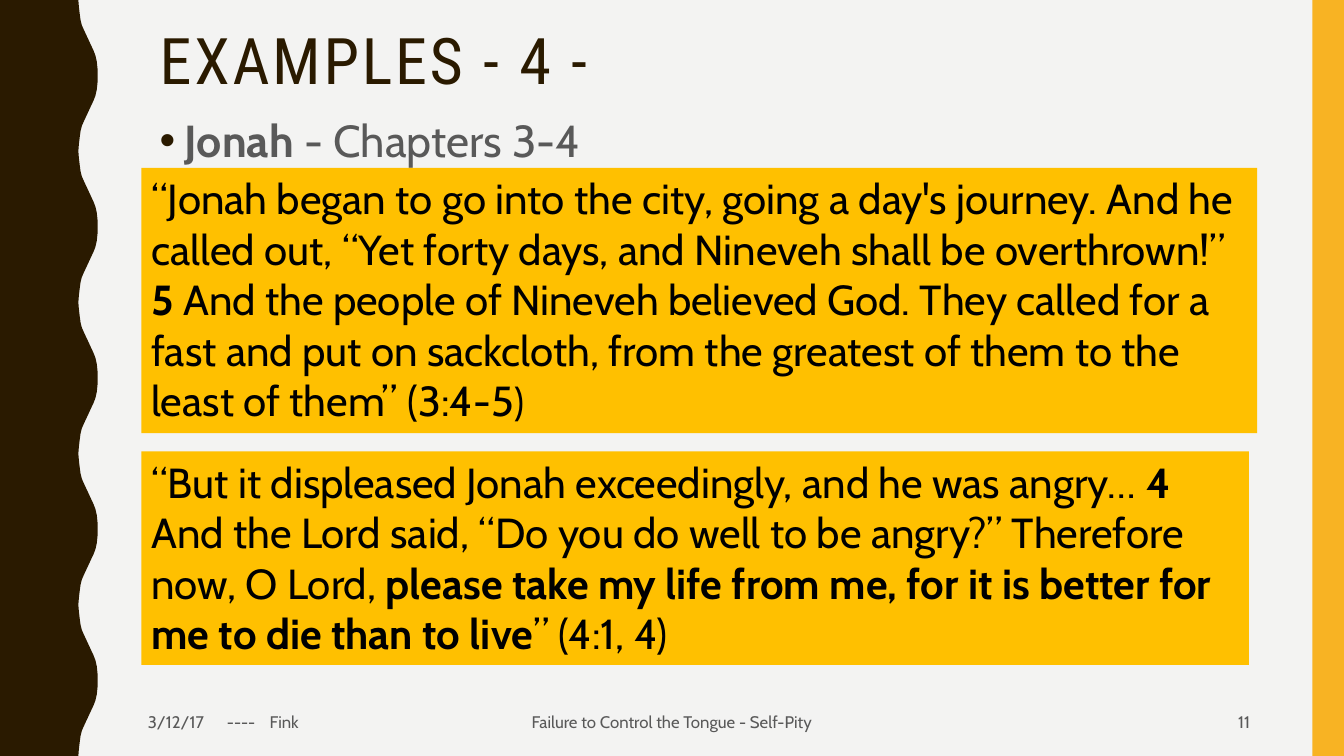
from lxml import etree
from pptx import Presentation
from pptx.dml.color import RGBColor
from pptx.enum.shapes import MSO_SHAPE
from pptx.enum.text import MSO_ANCHOR, MSO_AUTO_SIZE, PP_ALIGN
from pptx.oxml.ns import qn
from pptx.util import Pt

RECTANGLE = MSO_SHAPE.RECTANGLE
TOP, MIDDLE = MSO_ANCHOR.TOP, MSO_ANCHOR.MIDDLE
LEFT, CENTER, RIGHT = PP_ALIGN.LEFT, PP_ALIGN.CENTER, PP_ALIGN.RIGHT
GROW = MSO_AUTO_SIZE.SHAPE_TO_FIT_TEXT

COLORS = {
    "background": "F3F3F2",
    "brown": "2A1A00",
    "edge": "F8B323",
    "quote": "FFC000",
    "grey": "595959",
    "black": "000000",
}
WIDTH, HEIGHT = 960, 540


def paint(shape, color):
    shape.shadow.inherit = False
    shape.fill.solid()
    shape.fill.fore_color.rgb = RGBColor.from_string(COLORS[color])
    shape.line.fill.background()


def add_text(area, spans, color, font="Cabin", anchor=TOP, align=LEFT):
    """Add a text box; spans are (text, size, bold). Return box and paragraph."""
    box = page.shapes.add_textbox(*(Pt(length) for length in area))
    frame = box.text_frame
    frame.word_wrap = True
    frame.vertical_anchor = anchor
    para = frame.paragraphs[0]
    para.alignment = align
    for text, size, bold in spans:
        span = para.add_run()
        span.text = text
        span.font.name = font
        span.font.size = Pt(size)
        span.font.bold = bold
        span.font.color.rgb = RGBColor.from_string(COLORS[color])
    return box, para


deck = Presentation()
deck.slide_width, deck.slide_height = Pt(WIDTH), Pt(HEIGHT)
page = deck.slides.add_slide(deck.slide_layouts[6])
page.background.fill.solid()
page.background.fill.fore_color.rgb = RGBColor.from_string(COLORS["background"])

# Wavy left band: a half wave, mirrored and repeated down the page
half_wave = [
    (56, 0), (56.4, 5), (57, 10), (57.6, 14.4), (58.5, 18),
    (59.8, 21), (61.2, 24), (62.6, 27), (64, 30), (65.4, 33),
    (66.8, 36), (68.2, 39.6), (69.2, 44), (69.7, 49), (69.8, 54),
]
period = 108
wave = half_wave + [(x, period - y) for x, y in reversed(half_wave[:-1])]
outline = [(x, y + top) for top in range(0, HEIGHT, period) for x, y in wave]
builder = page.shapes.build_freeform(0, 0, scale=1.0)
builder.add_line_segments([(Pt(x), Pt(y)) for x, y in outline + [(0, HEIGHT)]])
paint(builder.convert_to_shape(), "brown")

right_edge = page.shapes.add_shape(RECTANGLE, Pt(937.5), 0, Pt(22.5), Pt(HEIGHT))
paint(right_edge, "edge")

# Title and bullet
title, title_para = add_text((107, 17.5, 793, 56), [("EXAMPLES - 4 -", 45.9, False)],
                             "brown", "Roboto Condensed", MIDDLE)
title_para.line_spacing = 0.9
title_para.runs[0].font._element.set("spc", "200")

bullet, bullet_para = add_text(
    (107, 73.5, 791, 381.5),
    [("Jonah ", 32, True), ("- Chapters 3-4", 32, False)], "grey")
bullet_para.line_spacing = 1.1
bullet_para.space_before = Pt(7)
properties = bullet_para._p.get_or_add_pPr()
properties.set("marL", str(Pt(18)))
properties.set("indent", str(Pt(-18)))
bullet_color = etree.SubElement(properties, qn("a:buClr"))
etree.SubElement(bullet_color, qn("a:srgbClr"), val=COLORS["brown"])
etree.SubElement(properties, qn("a:buFont"), typeface="Arial")
etree.SubElement(properties, qn("a:buChar"), char="•")

# Footer
footer_top, footer_height = 502, 27
footers = [
    (98.5, 183.5, "3/12/17\t----\tFink", LEFT),
    (318, 324, "Failure to Control the Tongue - Self-Pity", CENTER),
    (678, 222, "11", RIGHT),
]
for left, width, text, align in footers:
    footer, footer_para = add_text((left, footer_top, width, footer_height),
                                   [(text, 12, False)], "grey",
                                   anchor=MIDDLE, align=align)
    if "\t" in text:
        tabs = etree.SubElement(footer_para._p.get_or_add_pPr(), qn("a:tabLst"))
        for stop in (56.5, 87):
            etree.SubElement(tabs, qn("a:tab"), pos=str(Pt(stop)), algn="l")

# Quotations
quotes = [
    ((101, 120, 797, 189.5), [
        ("“Jonah began to go into the city, going a day's journey. And he called out, "
         "“Yet forty days, and Nineveh shall be overthrown!” ", 30, False),
        ("5 ", 30, True),
        ("And the people of Nineveh believed God. They called for a fast and put on "
         "sackcloth, from the greatest of them to the least of them” (3:4-5", 30, False),
        (")", 28, False),
    ]),
    ((101, 322.5, 791, 152.5), [
        ("“But it displeased Jonah exceedingly, and he was angry… ", 30, False),
        ("4 ", 30, True),
        ("And the Lord said, “Do you do well to be angry?” Therefore now, O Lord, ",
         30, False),
        ("please take my life from me, for it is better for me to die than to live",
         30, True),
        ("” (4:1, 4)", 30, False),
    ]),
]
for area, spans in quotes:
    quote, quote_para = add_text(area, spans, "black")
    quote.text_frame.auto_size = GROW
    paint(quote, "quote")

deck.save("out.pptx")
